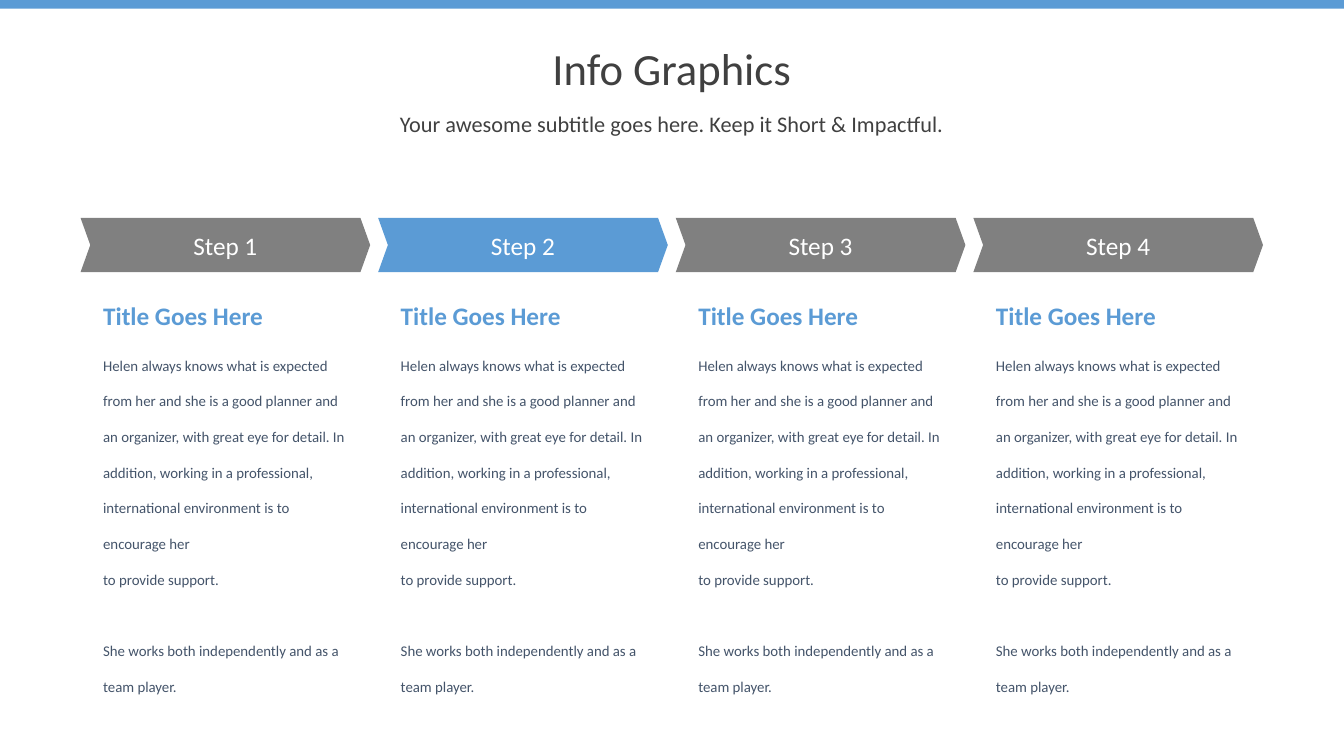
"""Build a four-step info graphic slide with chevrons and text columns."""
from pptx import Presentation
from pptx.dml.color import RGBColor
from pptx.enum.shapes import MSO_SHAPE
from pptx.enum.text import MSO_ANCHOR, MSO_AUTO_SIZE, PP_ALIGN
from pptx.util import Cm, Pt

BLUE = RGBColor(0x5B, 0x9B, 0xD5)
GRAY = RGBColor(0x80, 0x80, 0x80)
CHARCOAL = RGBColor(0x40, 0x40, 0x40)
SLATE = RGBColor(0x44, 0x54, 0x6A)
WHITE = RGBColor(0xFF, 0xFF, 0xFF)

STEP_COLORS = [GRAY, BLUE, GRAY, GRAY]
STEP_PITCH = 7.5
DESCRIPTION = [
    "Helen always knows what is expected from her and she is a good planner "
    "and an organizer, with great eye for detail. In addition, working in a "
    "professional, international environment is to encourage her\v"
    "to provide support.",
    "She works both independently and as a team player.",
]


def style(paragraph, size, color, align=PP_ALIGN.LEFT, bold=False):
    paragraph.alignment = align
    paragraph.font.name = "Calibri"
    paragraph.font.size = Pt(size)
    paragraph.font.bold = bold
    paragraph.font.color.rgb = color


def add_block(shape_type, left, top, width, height, color):
    block = slide.shapes.add_shape(
        shape_type, Cm(left), Cm(top), Cm(width), Cm(height))
    block.shadow.inherit = False
    block.fill.solid()
    block.fill.fore_color.rgb = color
    block.line.fill.background()
    return block


presentation = Presentation()
presentation.slide_width = Cm(33.87)
presentation.slide_height = Cm(19.05)
slide = presentation.slides.add_slide(presentation.slide_layouts[0])

add_block(MSO_SHAPE.RECTANGLE, 0, 0, 33.87, 0.22, BLUE)

headings = [
    (slide.shapes.title, "Info Graphics", 0.86, 1.85, 31.9, MSO_ANCHOR.MIDDLE),
    (slide.placeholders[1],
     "Your awesome subtitle goes here. Keep it Short & Impactful.",
     2.72, 0.94, 15.9, MSO_ANCHOR.TOP),
]
for heading, wording, top, height, size, anchor in headings:
    heading.left, heading.top = Cm(2.03), Cm(top)
    heading.width, heading.height = Cm(29.8), Cm(height)
    heading.text_frame.text = wording
    heading.text_frame.auto_size = MSO_AUTO_SIZE.NONE
    heading.text_frame.vertical_anchor = anchor
    heading_line = heading.text_frame.paragraphs[0]
    heading_line.line_spacing = 0.9
    heading_line.space_before = Pt(10)
    style(heading_line, size, CHARCOAL, PP_ALIGN.CENTER)

for index, step_color in enumerate(STEP_COLORS):
    offset = index * STEP_PITCH

    step = add_block(MSO_SHAPE.CHEVRON, 2.03 + offset, 5.49, 7.3, 1.37, step_color)
    step.adjustments[0] = 0.18
    step.text_frame.text = f"Step {index + 1}"
    step.text_frame.vertical_anchor = MSO_ANCHOR.MIDDLE
    style(step.text_frame.paragraphs[0], 18, WHITE, PP_ALIGN.CENTER)

    description = slide.shapes.add_textbox(
        Cm(2.35 + offset), Cm(8.41), Cm(6.65), Cm(9.22)).text_frame
    description.word_wrap = True
    description.text = "\n".join(DESCRIPTION)
    for passage in description.paragraphs:
        passage.line_spacing = 2
        style(passage, 10.6, SLATE)
    description.paragraphs[1].space_before = Pt(25.7)

    step_title = slide.shapes.add_textbox(
        Cm(2.35 + offset), Cm(7.44), Cm(4.6), Cm(1.02)).text_frame
    step_title.word_wrap = False
    step_title.text = "Title Goes Here"
    style(step_title.paragraphs[0], 18, BLUE, bold=True)

presentation.save("out.pptx")
